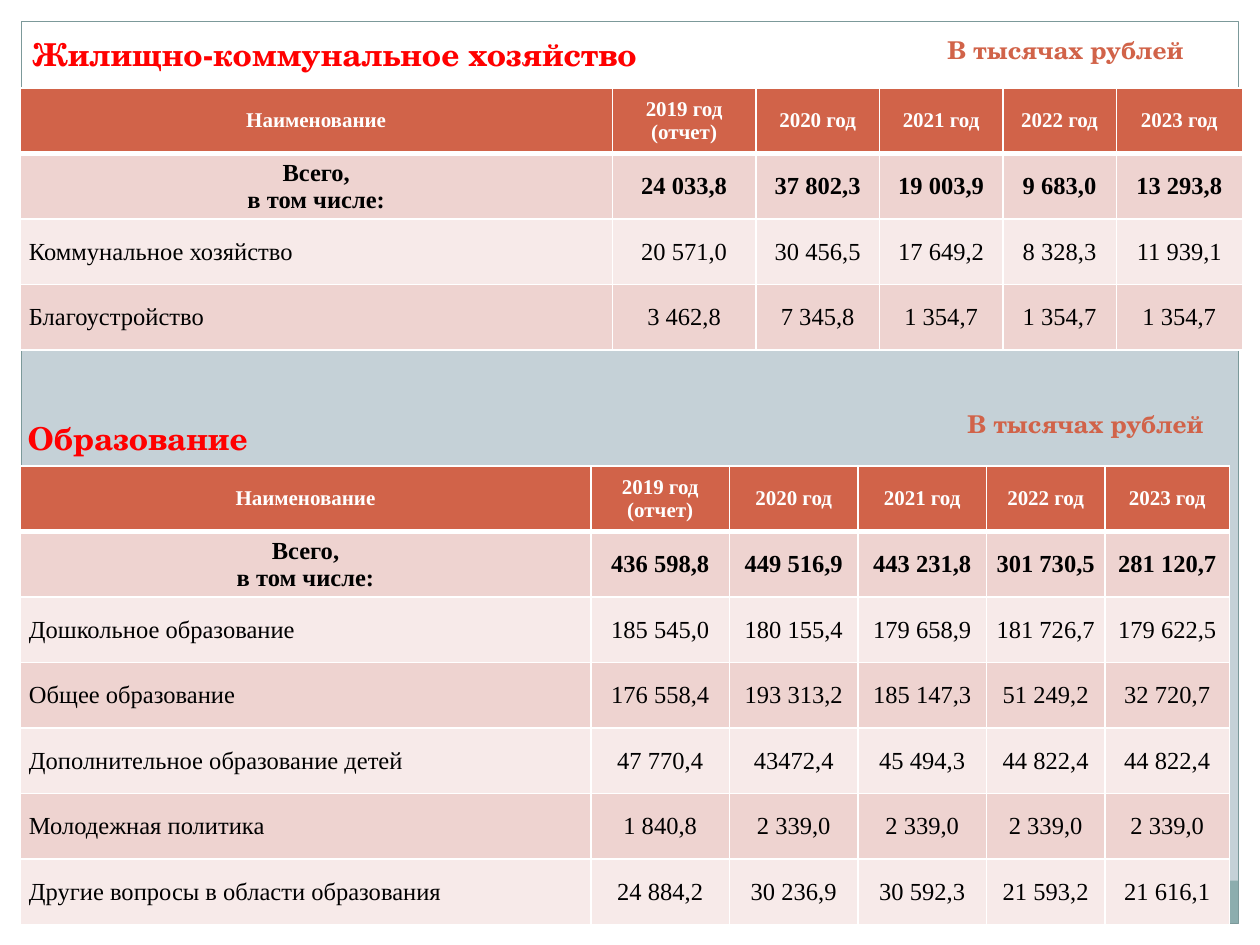
from lxml import etree
from pptx import Presentation
from pptx.dml.color import RGBColor
from pptx.enum.shapes import MSO_SHAPE
from pptx.enum.text import MSO_ANCHOR, MSO_AUTO_SIZE, PP_ALIGN
from pptx.oxml.ns import qn
from pptx.util import Inches, Pt

RECTANGLE = MSO_SHAPE.RECTANGLE
TOP, MIDDLE = MSO_ANCHOR.TOP, MSO_ANCHOR.MIDDLE
LEFT, CENTER, JUSTIFY = PP_ALIGN.LEFT, PP_ALIGN.CENTER, PP_ALIGN.JUSTIFY
NO_AUTOFIT = MSO_AUTO_SIZE.NONE

TITLE_ONLY = 5
WIDTH, HEIGHT = 10, 7.5
MARGIN = 0.17
ROW_HEIGHT = 0.52
HEADING_FONT = "TeX Gyre Schola"
TABLE_FONT = "Times New Roman"
COLORS = {
    "background": "C5D1D7",
    "white": "FFFFFF",
    "black": "000000",
    "footer": "8CADAE",
    "frame": "7C999A",
    "heading": "FF0000",
    "accent": "D16349",
    "band_dark": "EED3D0",
    "band_light": "F7EAE9",
}

HEADER = ["Наименование", "2019 год (отчет)", "2020 год", "2021 год", "2022 год", "2023 год"]
TOTAL = "Всего,\nв том числе:"
UNITS = "В тысячах рублей"
HOUSING_ROWS = [
    HEADER,
    [TOTAL, "24 033,8", "37 802,3", "19 003,9", "9 683,0", "13 293,8"],
    ["Коммунальное хозяйство", "20 571,0", "30 456,5", "17 649,2", "8 328,3", "11 939,1"],
    ["Благоустройство", "3 462,8", "7 345,8", "1 354,7", "1 354,7", "1 354,7"],
]
EDUCATION_ROWS = [
    HEADER,
    [TOTAL, "436 598,8", "449 516,9", "443 231,8", "301 730,5", "281 120,7"],
    ["Дошкольное образование", "185 545,0", "180 155,4", "179 658,9", "181 726,7", "179 622,5"],
    ["Общее образование", "176 558,4", "193 313,2", "185 147,3", "51 249,2", "32 720,7"],
    ["Дополнительное образование детей", "47 770,4", "43472,4", "45 494,3", "44 822,4", "44 822,4"],
    ["Молодежная политика", "1 840,8", "2 339,0", "2 339,0", "2 339,0", "2 339,0"],
    ["Другие вопросы в области образования", "24 884,2", "30 236,9", "30 592,3", "21 593,2", "21 616,1"],
]


def color(name):
    return RGBColor.from_string(COLORS[name])


def add_panel(slide, box, fill=None, line=None):
    panel = slide.shapes.add_shape(RECTANGLE, *map(Inches, box))
    panel.shadow.inherit = False
    if fill:
        panel.fill.solid()
        panel.fill.fore_color.rgb = color(fill)
    else:
        panel.fill.background()
    if line:
        panel.line.color.rgb = color(line)
        panel.line.width = Pt(0.75)
    else:
        panel.line.fill.background()


def add_backdrop(slide):
    slide.background.fill.solid()
    slide.background.fill.fore_color.rgb = color("background")
    inner_width, inner_height = WIDTH - 2 * MARGIN, HEIGHT - 2 * MARGIN
    for edge in [
        (0, HEIGHT - MARGIN, WIDTH, MARGIN),
        (0, 0, WIDTH, 1.52),
        (0, 0, MARGIN, HEIGHT),
        (WIDTH - MARGIN, 0, MARGIN, HEIGHT),
    ]:
        add_panel(slide, edge, fill="white")
    add_panel(slide, (MARGIN, 6.99, inner_width, 0.34), fill="footer")
    add_panel(slide, (MARGIN, MARGIN, inner_width, inner_height), line="frame")


def write_label(label, box, text, size, ink, wrap=True):
    label.left, label.top, label.width, label.height = map(Inches, box)
    frame = label.text_frame
    frame.text = text
    frame.word_wrap = wrap
    frame.auto_size = NO_AUTOFIT
    frame.vertical_anchor = TOP
    paragraph = frame.paragraphs[0]
    paragraph.alignment = LEFT
    font = paragraph.font
    font.name, font.size, font.bold = HEADING_FONT, Pt(size), True
    font.color.rgb = color(ink)


def add_borders(cell, widths):
    """Draw white borders; widths are points for left, right, top and bottom."""
    properties = cell._tc.get_or_add_tcPr()
    for side, width in zip("LRTB", widths):
        line = etree.SubElement(properties, qn(f"a:ln{side}"), w=str(Pt(width)))
        fill = etree.SubElement(line, qn("a:solidFill"))
        etree.SubElement(fill, qn("a:srgbClr"), val=COLORS["white"])


def format_cell(cell, text, row, column):
    is_header, is_total = row == 0, row == 1
    add_borders(cell, (1, 1, 3 if is_total else 1, 3 if is_header else 1))
    cell.fill.solid()
    band = "band_dark" if row % 2 else "band_light"
    cell.fill.fore_color.rgb = color("accent" if is_header else band)
    cell.margin_left = cell.margin_right = Inches(0.07)
    cell.margin_top = cell.margin_bottom = 0
    cell.vertical_anchor = MIDDLE
    cell.text = text
    for paragraph in cell.text_frame.paragraphs:
        paragraph.alignment = JUSTIFY if row > 1 and column == 0 else CENTER
        font = paragraph.font
        font.name = TABLE_FONT
        font.size = Pt(12 if is_header else 14)
        font.bold = is_header or is_total
        font.color.rgb = color("white" if is_header else "black")


def add_budget_table(slide, left, top, column_widths, rows):
    table = slide.shapes.add_table(
        len(rows), len(column_widths), Inches(left), Inches(top),
        Inches(sum(column_widths)), Inches(ROW_HEIGHT * len(rows))).table
    table.horz_banding = False
    for column, width in zip(table.columns, column_widths):
        column.width = Inches(width)
    for r, values in enumerate(rows):
        table.rows[r].height = Inches(ROW_HEIGHT)
        for c, text in enumerate(values):
            format_cell(table.cell(r, c), text, r, c)


def add_label(slide, box, *style, **options):
    write_label(slide.shapes.add_textbox(0, 0, 0, 0), box, *style, **options)


def add_housing_section(slide, left, top):
    add_budget_table(slide, left, top + 0.47, [4.7, 1.14, 0.98, 0.98, 0.9, 1], HOUSING_ROWS)
    title = slide.shapes.title
    write_label(title, (left, top, 5.15, 0.4), "Жилищно-коммунальное хозяйство",
                18, "heading", wrap=False)
    title.element.getparent().append(title.element)  # bring in front of the backdrop
    add_label(slide, (left + 7.26, top, 2.27, 0.47), UNITS, 14, "accent")


def add_education_section(slide, left, top):
    add_budget_table(slide, left, top + 0.5, [4.53, 1.1, 1.02, 1.02, 0.94, 0.99], EDUCATION_ROWS)
    add_label(slide, (left - 0.04, top + 0.08, 1.99, 0.4), "Образование",
              18, "heading", wrap=False)
    add_label(slide, (left + 7.42, top, 2.27, 0.47), UNITS, 14, "accent")


def main():
    deck = Presentation()
    deck.slide_width, deck.slide_height = Inches(WIDTH), Inches(HEIGHT)
    slide = deck.slides.add_slide(deck.slide_layouts[TITLE_ONLY])
    add_backdrop(slide)
    add_housing_section(slide, 0.16, 0.23)
    add_education_section(slide, 0.16, 3.2)
    deck.save("out.pptx")


if __name__ == "__main__":
    main()
